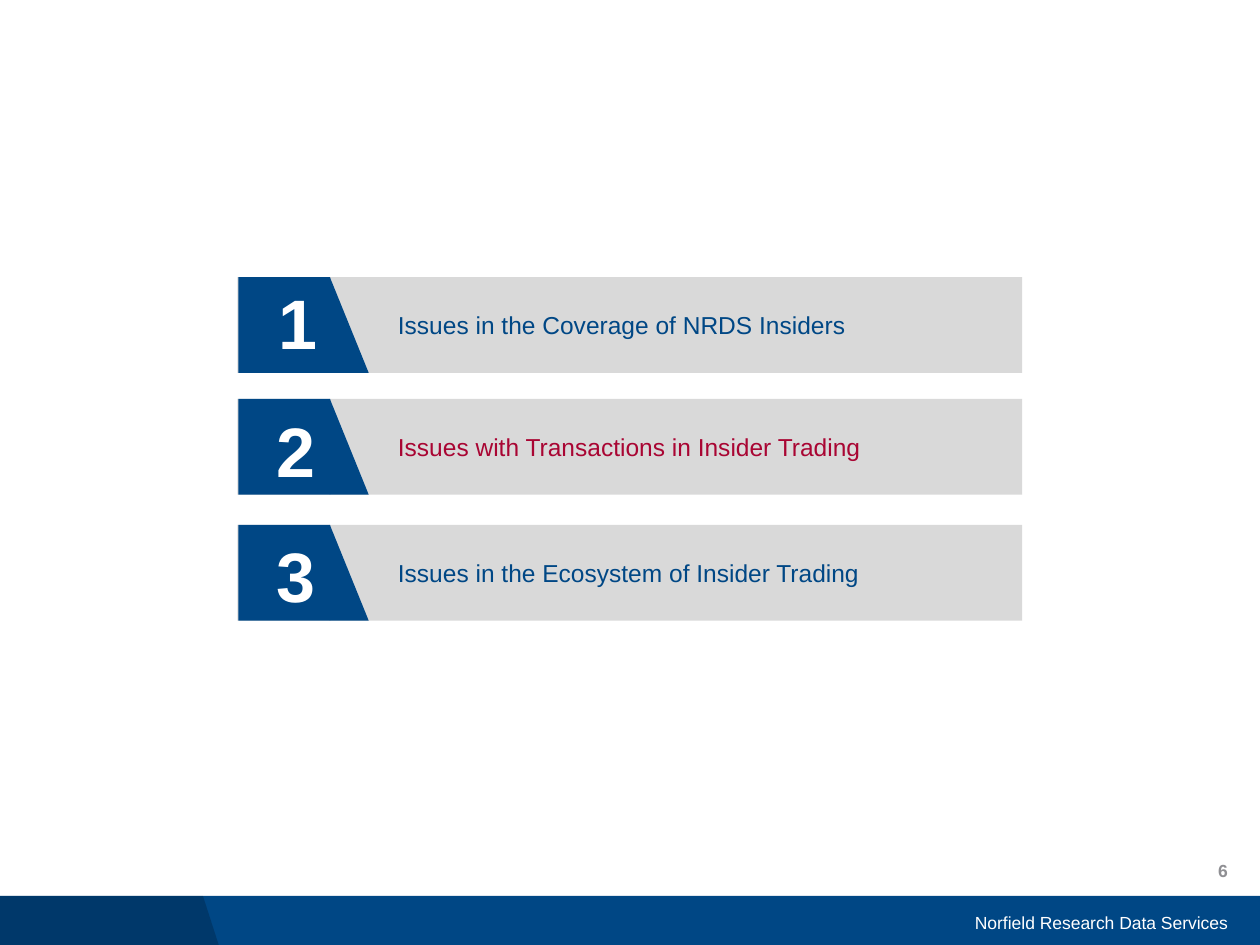
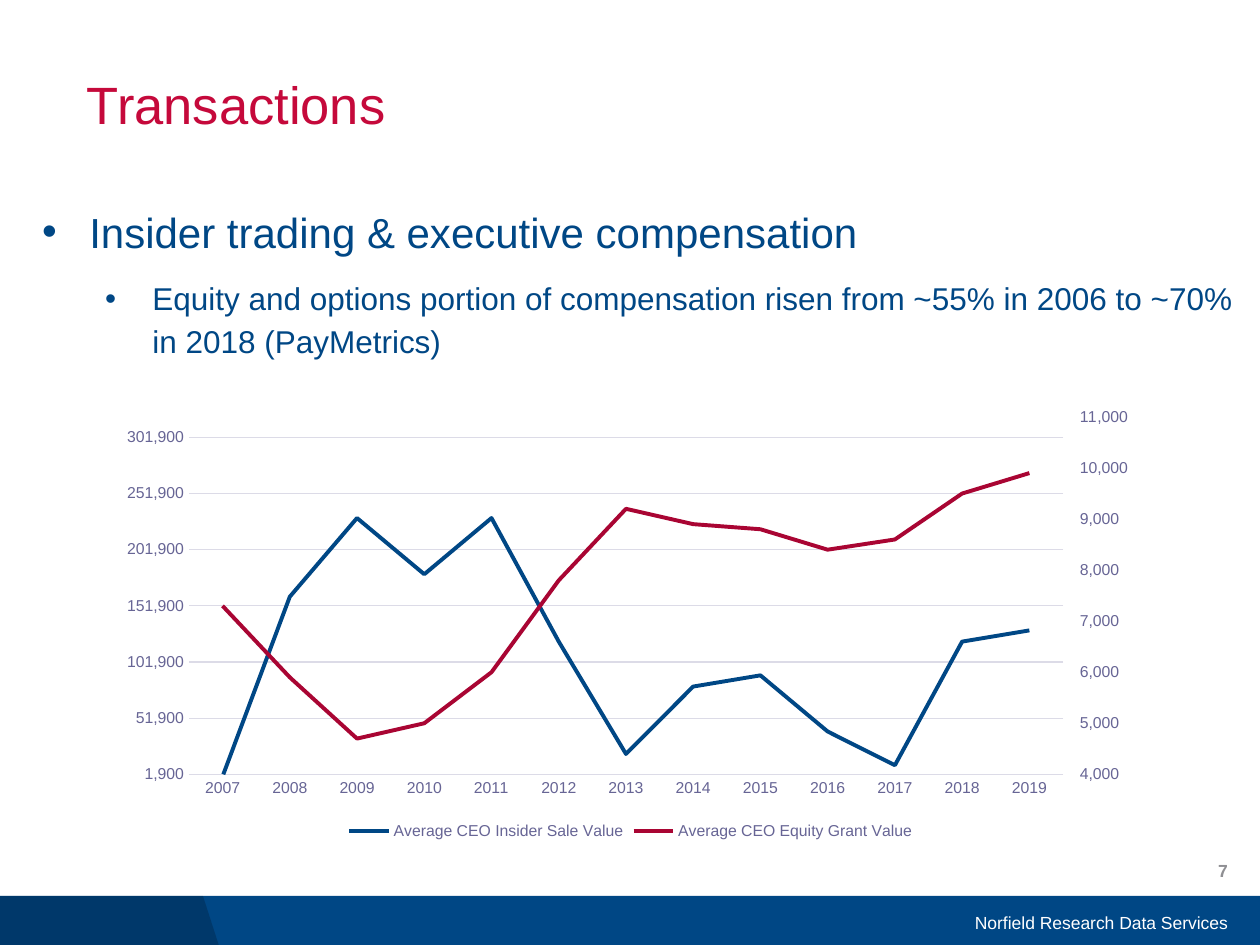
from copy import deepcopy
from pptx import Presentation
from pptx.chart.axis import ValueAxis
from pptx.chart.data import CategoryChartData
from pptx.dml.color import RGBColor
from pptx.enum.chart import XL_CHART_TYPE as ChartType, XL_LEGEND_POSITION as LegendPosition
from pptx.enum.chart import XL_TICK_MARK as TickMark
from pptx.enum.shapes import MSO_SHAPE as Shape
from pptx.enum.text import MSO_ANCHOR as Anchor, PP_ALIGN as Align
from pptx.oxml import parse_xml
from pptx.oxml.ns import nsdecls, qn
from pptx.oxml.xmlchemy import OxmlElement
from pptx.util import Pt

FONT = "Arial"
NAVY, CRIMSON, TITLE_RED = "004785", "A90533", "C5093B"
WHITE, BLACK, BAR_GREY, NUMBER_GREY = "FFFFFF", "000000", "D9D9D9", "8F8F93"
CHART_TEXT, AXIS_TEXT, GRID = "2D2C41", "676595", "DCDBE7"

FOOTER = "Norfield Research Data Services"
AGENDA = [
    {"number": "1", "topic": "Issues in the Coverage of NRDS Insiders", "color": NAVY,
     "top": 158.4, "number_at": (152.1, 156.2)},
    {"number": "2", "topic": "Issues with Transactions in Insider Trading", "color": CRIMSON,
     "top": 228, "number_at": (151, 229.3)},
    {"number": "3", "topic": "Issues in the Ecosystem of Insider Trading", "color": NAVY,
     "top": 300, "number_at": (151, 301)},
]
TITLE = "Transactions"
BULLETS = [
    (0, 24, "Insider trading & executive compensation"),
    (1, 18, "Equity and options portion of compensation risen from ~55% in 2006 "
            "to ~70% in 2018 (PayMetrics)"),
]
YEARS = [str(year) for year in range(2007, 2020)]
SALES = ("Average CEO Insider Sale Value", NAVY,
         [0, 160000, 230000, 180000, 230000, 120000, 20000,
          80000, 90000, 40000, 10000, 120000, 130000])
GRANTS = ("Average CEO Equity Grant Value", CRIMSON,
          [7300, 5900, 4700, 5000, 6000, 7800, 9200,
           8900, 8800, 8400, 8600, 9500, 9900])
CHART_BOX = (61.2, 228.2, 598.3, 254.9)
PLOT_BOX = (108, 238.3, 499.5, 204.3)
GRANT_FORMAT = '_(* #,##0_);_(* \\(#,##0\\);_(* "-"_);_(@_)'


def rgb(color):
    return RGBColor.from_string(color)


def points(*lengths):
    return [Pt(length) for length in lengths]


def style_font(font, size, color, bold=False):
    font.name, font.size, font.bold = FONT, Pt(size), bold
    font.color.rgb = rgb(color)


def paint(shape, color):
    shape.shadow.inherit = False
    shape.fill.solid()
    shape.fill.fore_color.rgb = rgb(color)
    shape.line.fill.background()
    return shape


def add_block(shapes, kind, box, color):
    return paint(shapes.add_shape(kind, *points(*box)), color)


def add_text(shapes, box, text, size=14, color=NAVY, bold=False, align=Align.LEFT,
             anchor=Anchor.TOP, side_inset=7.2, spacing=None):
    frame = shapes.add_textbox(*points(*box)).text_frame
    frame.word_wrap = True
    frame.vertical_anchor = anchor
    frame.margin_left = frame.margin_right = Pt(side_inset)
    paragraph = frame.paragraphs[0]
    paragraph.text = text
    paragraph.alignment = align
    paragraph.line_spacing = spacing
    style_font(paragraph.runs[0].font, size, color, bold)
    return frame


def add_bulleted(shapes, box, bullets):
    frame = add_text(shapes, box, bullets[0][2], side_inset=0)
    for index, (level, size, text) in enumerate(bullets):
        paragraph = frame.paragraphs[0] if index == 0 else frame.add_paragraph()
        paragraph.text = text
        paragraph.level = level
        paragraph.line_spacing = 1.14
        paragraph.space_before = Pt(8 if index else 0)
        paragraph.space_after = Pt(2)
        properties = paragraph._p.get_or_add_pPr()
        properties.set("marL", str(Pt(27 + 36 * level)))
        properties.set("indent", str(Pt(-27)))
        for tag, key, value in (("a:buFont", "typeface", FONT), ("a:buChar", "char", "•")):
            bullet = OxmlElement(tag)
            bullet.set(key, value)
            properties.append(bullet)
        style_font(paragraph.font, size, NAVY)
        style_font(paragraph.runs[0].font, size, NAVY)


def add_page(deck, number):
    shapes = deck.slides.add_slide(deck.slide_layouts[6]).shapes
    add_block(shapes, Shape.RECTANGLE, (0, 512, 720, 28), NAVY)
    outline = shapes.build_freeform(0, Pt(512))
    outline.add_line_segments([points(*corner) for corner in ((116, 512), (125, 540), (0, 540))])
    accent = paint(outline.convert_to_shape(), BLACK)
    alpha = OxmlElement("a:alpha")
    alpha.set("val", "20000")
    accent.fill._xPr.find(qn("a:solidFill"))[0].append(alpha)
    footing = {"size": 10, "align": Align.RIGHT, "anchor": Anchor.MIDDLE}
    add_text(shapes, (465.6, 513, 243, 28.8), FOOTER, color=WHITE, **footing)
    add_text(shapes, (546.6, 483, 162, 28.8), str(number), color=NUMBER_GREY, bold=True, **footing)
    return shapes


def add_agenda_row(shapes, row):
    top = row["top"]
    parts = shapes.add_group_shape().shapes
    add_block(parts, Shape.RECTANGLE, (135.7, top, 448.5, 54.7), BAR_GREY)
    add_block(parts, Shape.RECTANGLE, (136.2, top, 52.4, 54.7), NAVY)
    wedge = add_block(parts, Shape.ISOSCELES_TRIANGLE, (188.5, top, 22.2, 54.7), NAVY)
    wedge.adjustments[0] = 0
    add_text(parts, (*row["number_at"], 42, 55.7), row["number"],
             size=40, color=WHITE, bold=True)
    add_text(parts, (220.3, top + 15.2, 352, 24.2), row["topic"], color=row["color"])


def style_value_axis(axis, low, high, step, number_format, tick):
    axis.minimum_scale, axis.maximum_scale, axis.major_unit = low, high, step
    axis.major_tick_mark, axis.minor_tick_mark = tick, TickMark.NONE
    axis.tick_labels.number_format = number_format
    axis.tick_labels.number_format_is_linked = False
    style_font(axis.tick_labels.font, 9, AXIS_TEXT)
    axis.format.line.fill.background()


def set_value(element, tag, value):
    element.find(qn(tag)).set("val", value)


def move_to_right_axis(chart):
    plot_area = chart._chartSpace.chart.plotArea
    sales_lines = plot_area.find(qn("c:lineChart"))
    categories = plot_area.find(qn("c:catAx"))
    values = plot_area.find(qn("c:valAx"))
    grant_lines, years, grants = [deepcopy(part) for part in (sales_lines, categories, values)]
    sales_lines.remove(sales_lines.findall(qn("c:ser"))[1])
    grant_lines.remove(grant_lines.findall(qn("c:ser"))[0])
    for axis_id, value in zip(grant_lines.findall(qn("c:axId")), ("5001", "5002")):
        axis_id.set("val", value)
    for axis, own, other in ((years, "5001", "5002"), (grants, "5002", "5001")):
        set_value(axis, "c:axId", own)
        set_value(axis, "c:crossAx", other)
    set_value(years, "c:delete", "1")
    set_value(grants, "c:axPos", "r")
    set_value(grants, "c:crosses", "max")
    sales_lines.addnext(grant_lines)
    values.addnext(grants)
    grants.addnext(years)
    return ValueAxis(grants)


def place_plot(chart):
    left, top, width, height = CHART_BOX
    plot_left, plot_top, plot_width, plot_height = PLOT_BOX
    shares = {"x": (plot_left - left) / width, "y": (plot_top - top) / height,
              "w": plot_width / width, "h": plot_height / height}
    sizes = "".join(f'<c:{key} val="{share:.4f}"/>' for key, share in shares.items())
    layout = parse_xml(
        f'<c:layout {nsdecls("c")}><c:manualLayout><c:layoutTarget val="inner"/>'
        f'<c:xMode val="edge"/><c:yMode val="edge"/>{sizes}</c:manualLayout></c:layout>')
    plot_area = chart._chartSpace.chart.plotArea
    previous = plot_area.find(qn("c:layout"))
    if previous is not None:
        plot_area.remove(previous)
    plot_area.insert(0, layout)


def add_compensation_chart(shapes):
    data = CategoryChartData(number_format="#,##0")
    data.categories = YEARS
    for name, _, amounts in (SALES, GRANTS):
        data.add_series(name, amounts)
    chart = shapes.add_chart(ChartType.LINE, *points(*CHART_BOX), data).chart
    chart.has_title = False
    style_font(chart.font, 10, CHART_TEXT)
    chart.has_legend = True
    chart.legend.position = LegendPosition.BOTTOM
    chart.legend.include_in_layout = False
    style_font(chart.legend.font, 9, AXIS_TEXT)
    chart.plots[0].vary_by_categories = False
    for series, (_, color, _) in zip(chart.plots[0].series, (SALES, GRANTS)):
        series.smooth = False
        series.format.line.width = Pt(2.25)
        series.format.line.color.rgb = rgb(color)
    years = chart.category_axis
    years.major_tick_mark = TickMark.NONE
    style_font(years.tick_labels.font, 9, AXIS_TEXT)
    sales = chart.value_axis
    sales.has_major_gridlines = True
    for line in (years.format.line, sales.major_gridlines.format.line):
        line.color.rgb = rgb(GRID)
        line.width = Pt(0.75)
    style_value_axis(sales, 1900, 320000, 50000, "#,##0", TickMark.NONE)
    grants = move_to_right_axis(chart)
    grants.has_major_gridlines = False
    style_value_axis(grants, 4000, 11000, 1000, GRANT_FORMAT, TickMark.OUTSIDE)
    place_plot(chart)


def main():
    deck = Presentation()
    deck.slide_width, deck.slide_height = points(720, 540)
    agenda = add_page(deck, 6)
    for row in AGENDA:
        add_agenda_row(agenda, row)
    transactions = add_page(deck, 7)
    add_text(transactions, (49.7, 41.8, 563.8, 40.3), TITLE, size=30, color=TITLE_RED,
             side_inset=0, spacing=0.9)
    add_bulleted(transactions, (24, 110.2, 689.8, 334), BULLETS)
    add_compensation_chart(transactions)
    deck.save("out.pptx")


if __name__ == "__main__":
    main()
